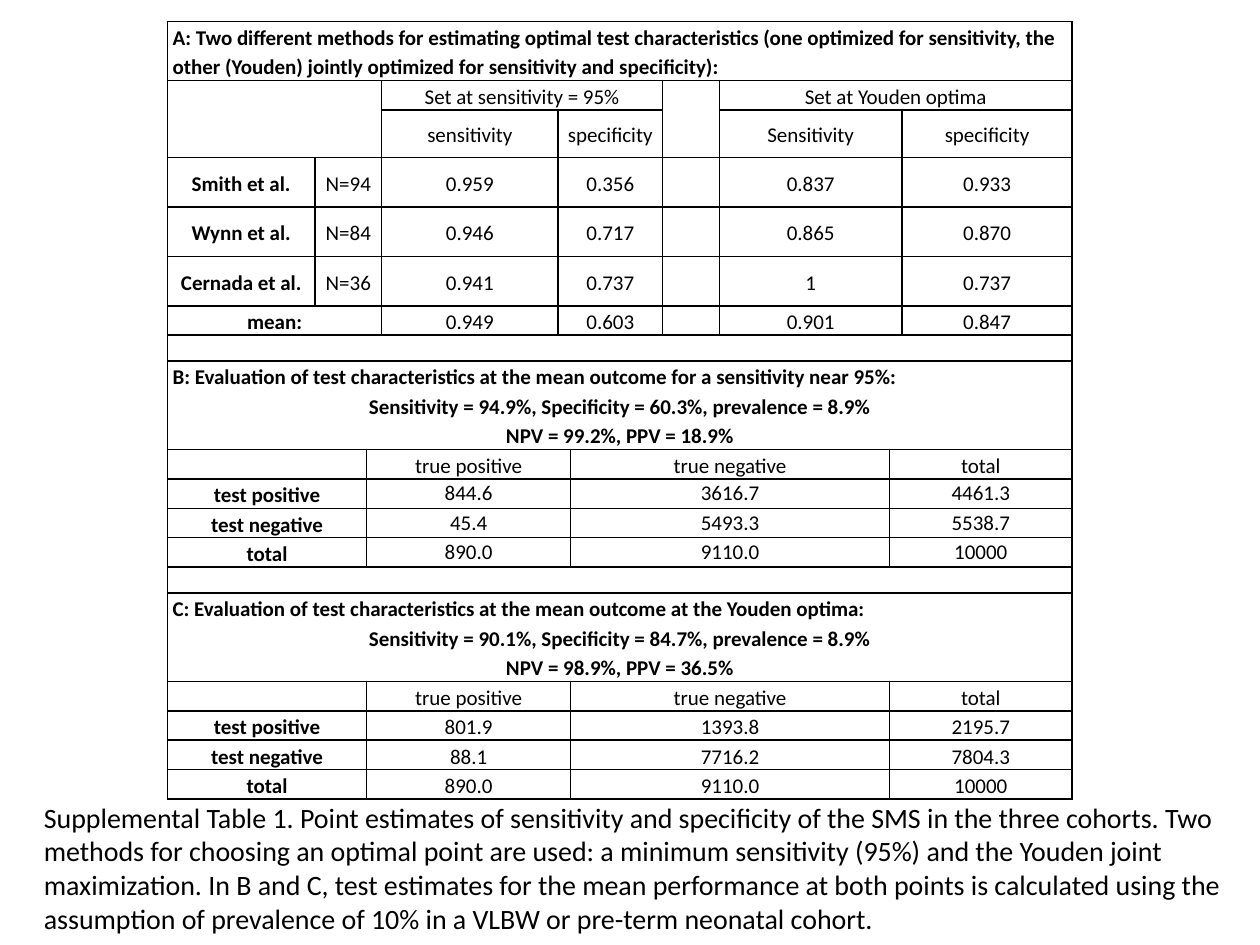
from dataclasses import dataclass

from pptx import Presentation
from pptx.dml.color import RGBColor
from pptx.enum.text import MSO_ANCHOR as Anchor, PP_ALIGN as Align
from pptx.oxml import parse_xml
from pptx.oxml.ns import nsdecls
from pptx.util import Inches, Pt

GRID_COLUMNS, GRID_ROWS = 100, 75
TABLE_COLUMNS = [11.7, 4.1, 1.2, 14, 1, 7.3, 4.5, 13.5, 1, 13.5]
LINE, GAP, COHORT = 2.34, 2, 3.92
PANEL_ROWS = [GAP, 3 * LINE] + [LINE] * 4
TABLE_ROWS = [2 * LINE, LINE, 3.8] + [COHORT] * 3 + [LINE] + PANEL_ROWS * 2

FULL = [10]
GROUPS = [3, 3, 1, 3]
MEASURES = [3, 1, 2, 1, 2, 1]
COHORTS = [1, 2, 1, 2, 1, 2, 1]
COUNTS = [2, 3, 3, 2]

TITLE_A = ("A: Two different methods for estimating optimal test characteristics "
           "(one optimized for sensitivity, the other (Youden) jointly optimized "
           "for sensitivity and specificity):")
PANEL_A = [
    (GROUPS, ["", "Set at sensitivity = 95%", "", "Set at Youden optima"]),
    (MEASURES, ["", "sensitivity", "specificity", "", "Sensitivity", "specificity"]),
    (COHORTS, ["Smith et al.", "N=94", "0.959", "0.356", "", "0.837", "0.933"]),
    (COHORTS, ["Wynn et al.", "N=84", "0.946", "0.717", "", "0.865", "0.870"]),
    (COHORTS, ["Cernada et al.", "N=36", "0.941", "0.737", "", "1", "0.737"]),
    (MEASURES, ["mean:", "0.949", "0.603", "", "0.901", "0.847"]),
]
HEADING_B = [
    "B: Evaluation of test characteristics at the mean outcome for a sensitivity near 95%:",
    "Sensitivity = 94.9%, Specificity = 60.3%, prevalence = 8.9%",
    "NPV = 99.2%, PPV = 18.9%",
]
COUNTS_B = [["844.6", "3616.7", "4461.3"], ["45.4", "5493.3", "5538.7"],
            ["890.0", "9110.0", "10000"]]
HEADING_C = [
    "C: Evaluation of test characteristics at the mean outcome at the Youden optima:",
    "Sensitivity = 90.1%, Specificity = 84.7%, prevalence = 8.9%",
    "NPV = 98.9%, PPV = 36.5%",
]
COUNTS_C = [["801.9", "1393.8", "2195.7"], ["88.1", "7716.2", "7804.3"],
            ["890.0", "9110.0", "10000"]]
CAPTION = ("Supplemental Table 1. Point estimates of sensitivity and specificity of the SMS "
           "in the three cohorts. Two methods for choosing an optimal point are used: a minimum "
           "sensitivity (95%) and the Youden joint maximization. In B and C, test estimates for "
           "the mean performance at both points is calculated using the assumption of prevalence "
           "of 10% in a VLBW or pre-term neonatal cohort.")


@dataclass(frozen=True)
class Theme:
    font: str = "Calibri"
    ink: str = "000000"
    paper: str = "FFFFFF"
    cell_size: int = 12
    caption_size: int = 16
    border: int = 1
    leading: float = 1.15
    side_inset: float = 0.4


class Page:
    def __init__(self, deck, theme):
        self.theme = theme
        self.slide = deck.slides.add_slide(deck.slide_layouts[6])
        self.unit = deck.slide_width / GRID_COLUMNS

    def span(self, units):
        return round(units * self.unit)

    def add_text(self, paragraph, text, size, bold=False):
        run = paragraph.add_run()
        run.text = text
        run.font.name = self.theme.font
        run.font.size = Pt(size)
        run.font.bold = bold
        run.font.color.rgb = RGBColor.from_string(self.theme.ink)

    def table(self, left, top, columns, rows):
        frame = self.slide.shapes.add_table(
            len(rows), len(columns), *map(self.span, (left, top, sum(columns), sum(rows))))
        table = frame.table
        table.first_row = table.horz_banding = False
        for column, width in zip(table.columns, columns):
            column.width = self.span(width)
        for row, height in zip(table.rows, rows):
            row.height = self.span(height)
        for cell in table.iter_cells():
            self.style_cell(cell)
        return table

    def style_cell(self, cell):
        theme = self.theme
        cell.margin_left = cell.margin_right = self.span(theme.side_inset)
        cell.margin_top = cell.margin_bottom = 0
        cell.vertical_anchor = Anchor.MIDDLE
        properties = cell._tc.get_or_add_tcPr()
        for side in "LRTB":
            properties.append(parse_xml(
                f'<a:ln{side} {nsdecls("a")} w="{Pt(theme.border)}"><a:solidFill>'
                f'<a:srgbClr val="{theme.ink}"/></a:solidFill></a:ln{side}>'))
        cell.fill.solid()
        cell.fill.fore_color.rgb = RGBColor.from_string(theme.paper)
        cell.text_frame.paragraphs[0]._p.append(parse_xml(
            f'<a:endParaRPr {nsdecls("a")} sz="{theme.cell_size * 100}"/>'))

    def fill_cell(self, cell, lines, bold=False, left_first=False, leading=None):
        for index, line in enumerate(lines):
            body = cell.text_frame
            paragraph = body.add_paragraph() if index else body.paragraphs[0]
            paragraph.alignment = Align.LEFT if left_first and not index else Align.CENTER
            paragraph.line_spacing = leading or self.theme.leading
            self.add_text(paragraph, line, self.theme.cell_size, bold)

    def merged_cells(self, table, row, spans):
        column = 0
        for width in spans:
            cell = table.cell(row, column)
            if width > 1 and not (cell.is_merge_origin or cell.is_spanned):
                cell.merge(table.cell(row, column + width - 1))
            yield cell
            column += width

    def heading_row(self, table, row, lines):
        for cell in self.merged_cells(table, row, FULL):
            self.fill_cell(cell, lines, bold=True, left_first=True)

    def data_row(self, table, row, spans, texts, leading=None):
        for index, cell in enumerate(self.merged_cells(table, row, spans)):
            label = index == 0
            if texts[index]:
                self.fill_cell(cell, [texts[index]], label, leading=None if label else leading)

    def count_panel(self, table, row, heading, counts, leading=None):
        self.data_row(table, row, FULL, [""])
        self.heading_row(table, row + 1, heading)
        self.data_row(table, row + 2, COUNTS, ["", "true positive", "true negative", "total"])
        labels = ["test positive", "test negative", "total"]
        for offset, (label, values) in enumerate(zip(labels, counts), 3):
            self.data_row(table, row + offset, COUNTS, [label] + values, leading)

    def caption(self, left, top, width, height, text):
        box = self.slide.shapes.add_textbox(*map(self.span, (left, top, width, height)))
        box.text_frame.word_wrap = True
        box.text_frame.vertical_anchor = Anchor.MIDDLE
        self.add_text(box.text_frame.paragraphs[0], text, self.theme.caption_size)


def main():
    deck = Presentation()
    deck.slide_width, deck.slide_height = Inches(GRID_COLUMNS / 10), Inches(GRID_ROWS / 10)
    page = Page(deck, Theme())
    table = page.table(13.3, 1.7, TABLE_COLUMNS, TABLE_ROWS)

    page.heading_row(table, 0, [TITLE_A])
    table.cell(1, 0).merge(table.cell(2, 2))
    table.cell(1, 6).merge(table.cell(2, 6))
    for row, (spans, texts) in enumerate(PANEL_A, 1):
        page.data_row(table, row, spans, texts)

    start_b = 1 + len(PANEL_A)
    page.count_panel(table, start_b, HEADING_B, COUNTS_B, leading=1.0)
    page.count_panel(table, start_b + len(PANEL_ROWS), HEADING_C, COUNTS_C)

    page.caption(2.5, 62.8, 96.7, 12.1, CAPTION)
    deck.save("out.pptx")


if __name__ == "__main__":
    main()
